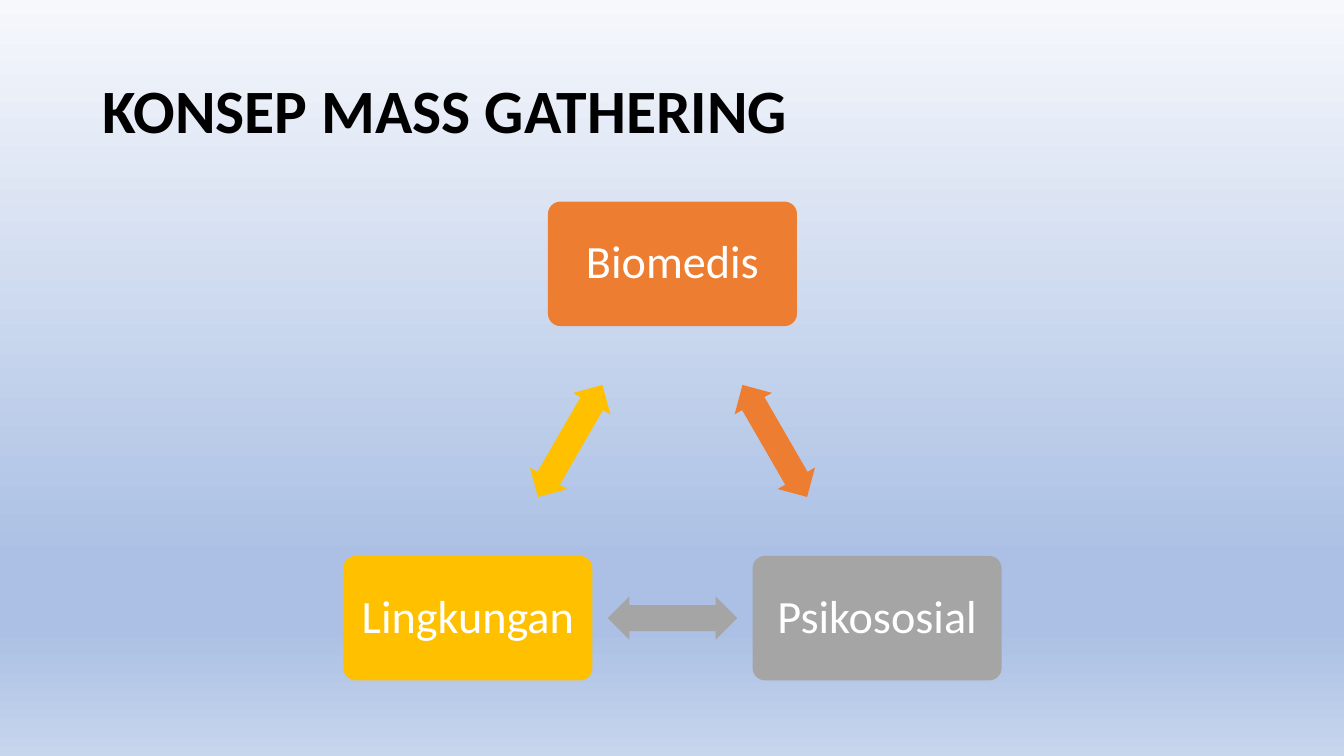
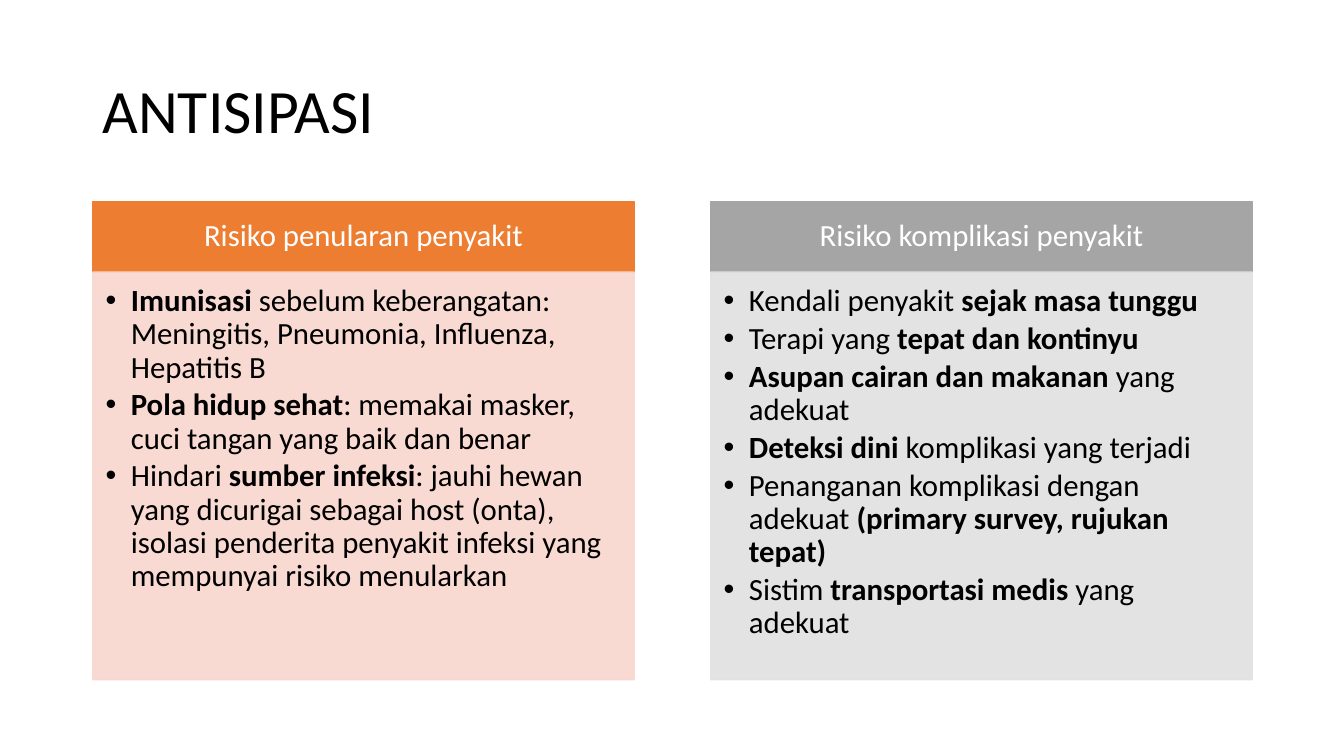
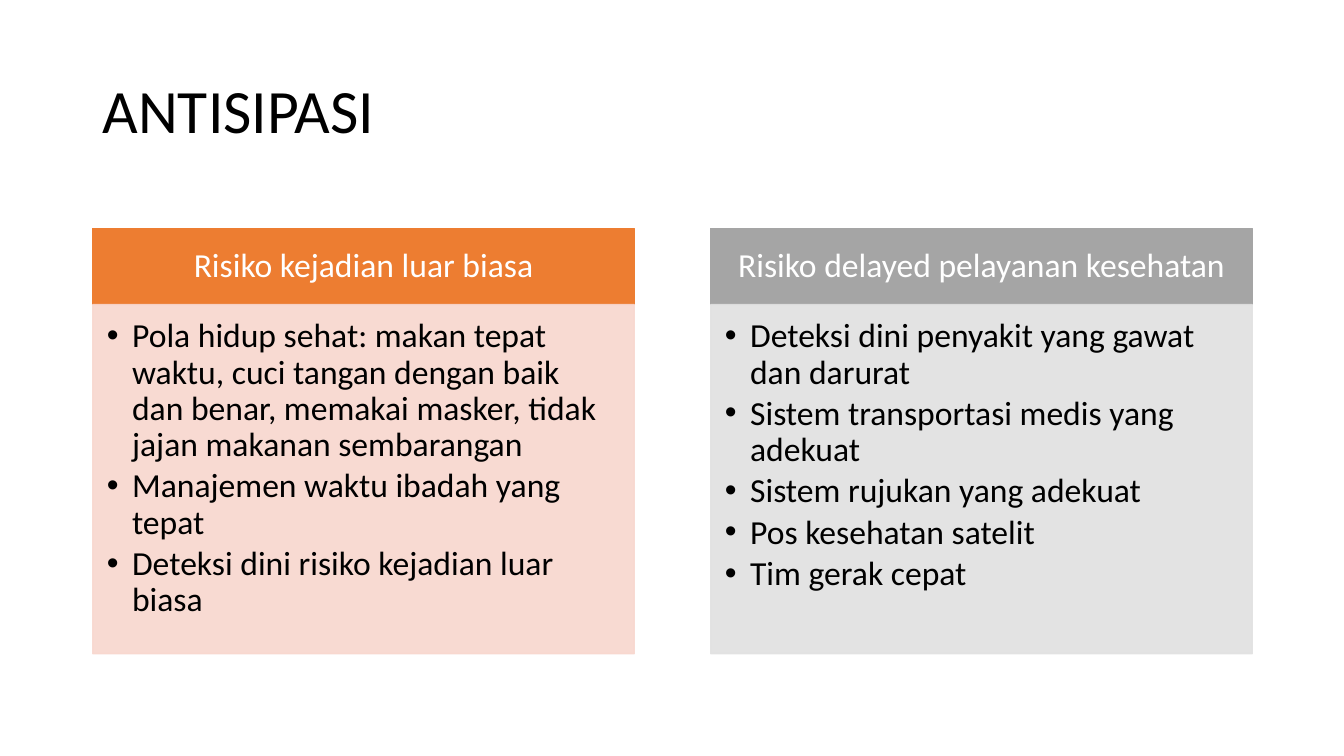
from collections import namedtuple
from copy import deepcopy
from math import cos, radians, sin

from lxml.etree import SubElement
from pptx import Presentation
from pptx.dml.color import RGBColor
from pptx.enum.shapes import MSO_SHAPE as SHAPE
from pptx.enum.text import MSO_ANCHOR as ANCHOR, PP_ALIGN as ALIGN
from pptx.oxml.ns import qn
from pptx.util import Inches, Pt

Box = namedtuple("Box", "left top width height")

FONT = "Calibri"
BLACK, WHITE = "000000", "FFFFFF"
ORANGE, GREY, GOLD = "ED7D31", "A5A5A5", "FFC000"
PALE_ORANGE, PALE_GREY = "F8D7CE", "E1E1E1"
SKY = [(0, "F6F8FC"), (0.74, "ABC0E4"), (0.83, "ABC0E4"), (1, "C7D5ED")]

SLIDE_W, SLIDE_H = 13.33, 7.5
MARGIN = 0.92
TITLE = Box(MARGIN, 0.4, 11.5, 1.45)
CONTENT = Box(MARGIN, 2, 11.5, 4.75)


def rgb(color):
    return RGBColor.from_string(color)


def inches(box):
    return [Inches(v) for v in box]


def set_alpha(shape, percent):
    for clr in shape._element.spPr.iter(qn("a:srgbClr")):
        SubElement(clr, qn("a:alpha"), val=str(percent * 1000))


def add_block(s, kind, box, fill, line=None):
    sp = s.shapes.add_shape(kind, *inches(box))
    sp.shadow.inherit = False
    sp.fill.solid()
    sp.fill.fore_color.rgb = rgb(fill)
    if line:
        sp.line.color.rgb = rgb(line)
        sp.line.width = Pt(1)
    else:
        sp.line.fill.background()
    return sp


def set_frame(shape, insets, anchor):
    tf = shape.text_frame
    tf.word_wrap = True
    tf.vertical_anchor = anchor
    tf.margin_left, tf.margin_top, tf.margin_right, tf.margin_bottom = inches(insets)
    return tf


def write(p, text, size, color, align=ALIGN.LEFT, bold=False):
    p.alignment = align
    p.line_spacing = 0.9
    for i, part in enumerate(text.split("**")):
        if part:
            r = p.add_run()
            r.text = part
            r.font.name = FONT
            r.font.size = Pt(size)
            r.font.bold = bold or i % 2 == 1
            r.font.color.rgb = rgb(color)


def set_bullet(p, indent):
    pPr = p._p.get_or_add_pPr()
    pPr.set("marL", str(Inches(indent)))
    pPr.set("indent", str(-Inches(indent)))
    SubElement(pPr, qn("a:buFont"), typeface="Arial")
    SubElement(pPr, qn("a:buChar"), char="•")


def add_titled_slide(prs, title, bold=False):
    s = prs.slides.add_slide(prs.slide_layouts[6])
    sp = s.shapes.add_textbox(*inches(TITLE))
    tf = set_frame(sp, (0.1, 0.05, 0.1, 0.05), ANCHOR.MIDDLE)
    write(tf.paragraphs[0], title, 44, BLACK, bold=bold)
    return s


def set_sky(s):
    fill = s.background.fill
    fill.gradient()
    fill.gradient_angle = 270
    stop_list = s.element.find(".//" + qn("a:gsLst"))
    while len(stop_list) < len(SKY):
        stop_list.append(deepcopy(stop_list[0]))
    for stop, (position, color) in zip(fill.gradient_stops, SKY):
        stop.position = position
        stop.color.rgb = rgb(color)


def add_cycle(s, box, nodes):
    node_w, node_h = box.height * 0.52, box.height * 0.26
    arrow_w, arrow_h = box.height * 0.27, box.height * 0.09
    radius = (box.height - node_h) / 1.5
    cx, cy = box.left + box.width / 2, box.top + node_h / 2 + radius
    step = 360 / len(nodes)

    def centred(angle, distance, w, h):
        x = cx + distance * sin(radians(angle))
        y = cy - distance * cos(radians(angle))
        return Box(x - w / 2, y - h / 2, w, h)

    for i, (label, color) in enumerate(nodes):
        angle = i * step
        node = add_block(s, SHAPE.ROUNDED_RECTANGLE,
                         centred(angle, radius, node_w, node_h), color)
        node.adjustments[0] = 0.1
        tf = set_frame(node, [0.14] * 4, ANCHOR.MIDDLE)
        write(tf.paragraphs[0], label, 33, WHITE, ALIGN.CENTER)

        midway = centred(angle + step / 2, radius * cos(radians(step / 2)), arrow_w, arrow_h)
        arrow = add_block(s, SHAPE.LEFT_RIGHT_ARROW, midway, color)
        arrow.adjustments[0], arrow.adjustments[1] = 0.6, 0.5
        arrow.rotation = angle + step / 2


def add_panel(s, box, size, heading, items, color, pale):
    em = size / 72
    head_h = 2.27 * em
    head = add_block(s, SHAPE.RECTANGLE, box._replace(height=head_h), color, color)
    tf = set_frame(head, [em * k for k in (0.56, 0.33, 0.56, 0.33)], ANCHOR.MIDDLE)
    write(tf.paragraphs[0], heading, size, WHITE, ALIGN.CENTER)

    body_box = box._replace(top=box.top + head_h, height=box.height - head_h)
    body = add_block(s, SHAPE.RECTANGLE, body_box, pale, pale)
    set_alpha(body, 90)
    tf = set_frame(body, [em * k for k in (0.42, 0.42, 0.56, 0.63)], ANCHOR.TOP)
    for i, item in enumerate(items):
        p = tf.add_paragraph() if i else tf.paragraphs[0]
        write(p, item, size, BLACK)
        p.space_after = Pt(0.15 * size)
        set_bullet(p, 0.25)


def add_panels(s, box, size, height, panels):
    top = box.top + (box.height - height) / 2
    width = box.width * 0.467
    colors = [(ORANGE, PALE_ORANGE), (GREY, PALE_GREY)]
    lefts = [box.left, box.left + box.width - width]
    for left, (heading, items), (color, pale) in zip(lefts, panels, colors):
        add_panel(s, Box(left, top, width, height), size, heading, items, color, pale)


CONCEPTS = [("Biomedis", ORANGE), ("Psikososial", GREY), ("Lingkungan", GOLD)]

DISEASE_RISKS = [
    ("Risiko penularan penyakit", [
        "**Imunisasi** sebelum keberangatan: Meningitis, Pneumonia, Influenza, Hepatitis B",
        "**Pola hidup sehat**: memakai masker, cuci tangan yang baik dan benar",
        "Hindari **sumber infeksi**: jauhi hewan yang dicurigai sebagai host (onta), "
        "isolasi penderita penyakit infeksi yang mempunyai risiko menularkan",
    ]),
    ("Risiko komplikasi penyakit", [
        "Kendali penyakit **sejak masa tunggu**",
        "Terapi yang **tepat dan kontinyu**",
        "**Asupan cairan dan makanan** yang adekuat",
        "**Deteksi dini** komplikasi yang terjadi",
        "Penanganan komplikasi dengan adekuat **(primary survey, rujukan tepat)**",
        "Sistim **transportasi medis** yang adekuat",
    ]),
]

SERVICE_RISKS = [
    ("Risiko kejadian luar biasa", [
        "Pola hidup sehat: makan tepat waktu, cuci tangan dengan baik dan benar, "
        "memakai masker, tidak jajan makanan sembarangan",
        "Manajemen waktu ibadah yang tepat",
        "Deteksi dini risiko kejadian luar biasa",
    ]),
    ("Risiko delayed pelayanan kesehatan", [
        "Deteksi dini penyakit yang gawat dan darurat",
        "Sistem transportasi medis yang adekuat",
        "Sistem rujukan yang adekuat",
        "Pos kesehatan satelit",
        "Tim gerak cepat",
    ]),
]


def main():
    prs = Presentation()
    prs.slide_width, prs.slide_height = Inches(SLIDE_W), Inches(SLIDE_H)

    s = add_titled_slide(prs, "KONSEP MASS GATHERING", bold=True)
    set_sky(s)
    add_cycle(s, CONTENT, CONCEPTS)

    for size, height, panels in [(22, 4.74, DISEASE_RISKS), (24, 4.22, SERVICE_RISKS)]:
        s = add_titled_slide(prs, "ANTISIPASI")
        add_panels(s, CONTENT, size, height, panels)

    prs.save("out.pptx")


if __name__ == "__main__":
    main()
